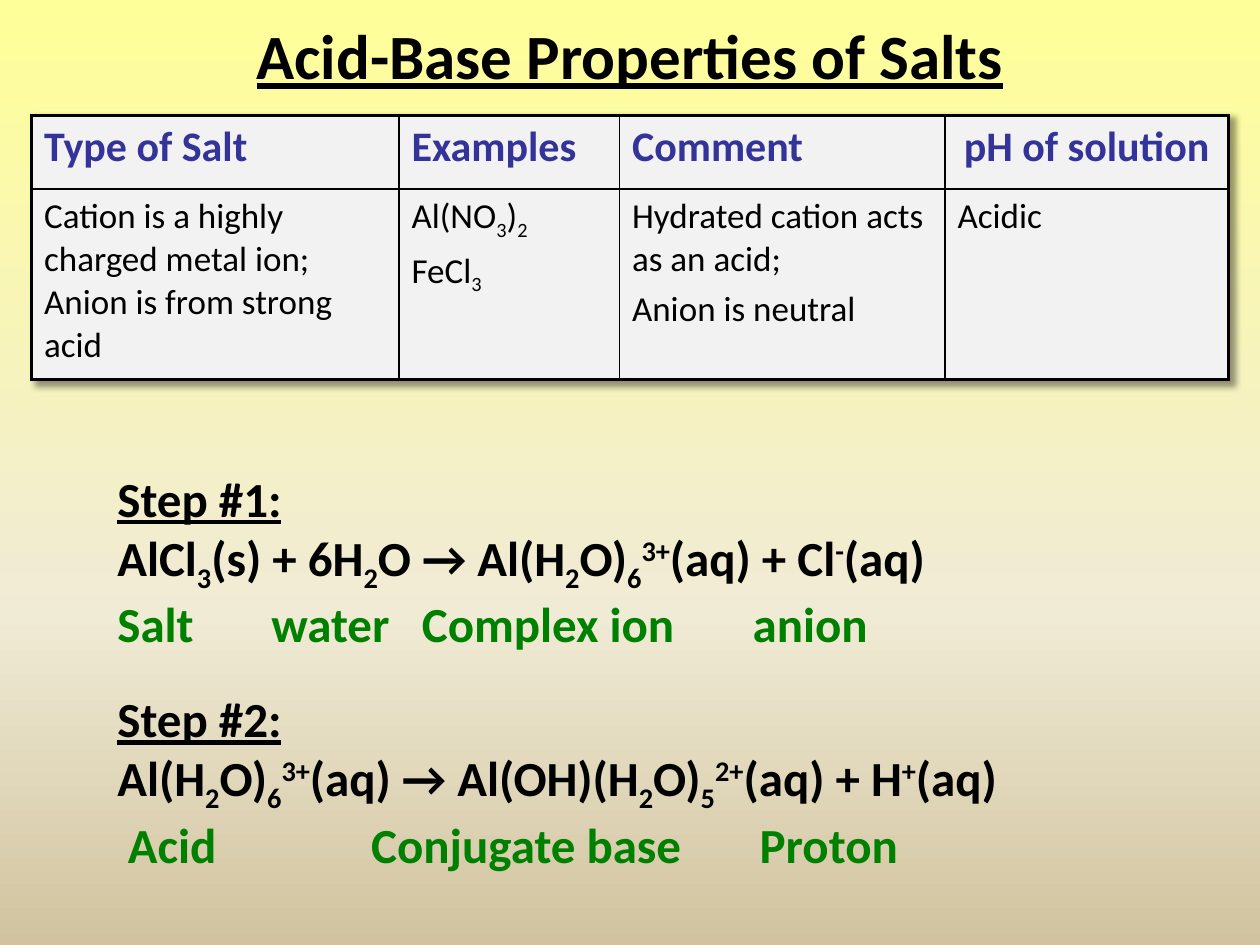
from lxml import etree
from pptx import Presentation
from pptx import util as u
from pptx.dml.color import RGBColor
from pptx.enum import text
from pptx.oxml import ns

BLACK = RGBColor(0x00, 0x00, 0x00)
BLUE = RGBColor(0x33, 0x33, 0x99)
GREEN = RGBColor(0x00, 0x80, 0x00)
PALE = RGBColor(0xF2, 0xF2, 0xF2)
YELLOW = RGBColor(0xFF, 0xFF, 0x99)
CREAM = RGBColor(0xF0, 0xEB, 0xD5)
SAND = RGBColor(0xD1, 0xC3, 0x9F)


def add_node(parent, tag, **attributes):
    node = etree.SubElement(parent, ns.qn(tag))
    for name, value in attributes.items():
        node.set(name, str(value))
    return node


def sub(content):
    return content, -25000


def sup(content):
    return content, 30000


class SlideBuilder:
    """Hold the style and the current slide, and add each kind of element."""

    font = "Calibri"
    thin, thick = u.Pt(1), u.Pt(2.25)

    def __init__(self, page):
        self.page = page

    def background(self, stops):
        fill = self.page.background.fill
        fill.gradient()
        fill.gradient_angle = 270
        stop_list = self.page.element.find(".//" + ns.qn("a:gsLst"))
        for stop in list(stop_list):
            stop_list.remove(stop)
        for percent, color in stops:
            stop = add_node(stop_list, "a:gs", pos=percent * 1000)
            add_node(stop, "a:srgbClr", val=color)

    def add_spans(self, para, spans, size, color=BLACK, bold=True, underline=False):
        for item in spans:
            content, baseline = (item, 0) if isinstance(item, str) else item
            span = para.add_run()
            span.text = content
            font = span.font
            font.name, font.size, font.bold = self.font, u.Pt(size), bold
            font.underline = underline
            font.color.rgb = color
            if baseline:
                span._r.get_or_add_rPr().set("baseline", str(baseline))

    def text_box(self, left, top, width, height):
        box = self.page.shapes.add_textbox(*map(u.Pt, (left, top, width, height)))
        box.text_frame.word_wrap = True
        return box.text_frame

    def title(self, content):
        frame = self.text_box(36, 0, 648, 62.6)
        frame.vertical_anchor = text.MSO_ANCHOR.MIDDLE
        para = frame.paragraphs[0]
        para.alignment = text.PP_ALIGN.CENTER
        self.add_spans(para, [content], 36, underline=True)

    def step(self, top, width, heading, equation, labels, tabs):
        frame = self.text_box(60, top, width, 108.7)
        self.add_spans(frame.paragraphs[0], [heading], 28, underline=True)
        self.add_spans(frame.add_paragraph(), equation, 28)
        para = frame.add_paragraph()
        tab_list = add_node(para._p.get_or_add_pPr(), "a:tabLst")
        for position in tabs:
            add_node(tab_list, "a:tab", pos=u.Pt(position), algn="l")
        self.add_spans(para, [labels], 28, GREEN)

    def borders(self, cell, edges):
        properties = cell._tc.get_or_add_tcPr()
        for side, outer in edges.items():
            line = add_node(properties, "a:ln" + side, w=self.thick if outer else self.thin)
            add_node(add_node(line, "a:solidFill"), "a:srgbClr", val=BLACK)

    def shadow(self, table):
        effects = etree.Element(ns.qn("a:effectLst"))
        shade = add_node(effects, "a:outerShdw", blurRad=u.Pt(4), dist=u.Pt(3),
                         dir=2700000, algn="tl", rotWithShape=0)
        add_node(add_node(shade, "a:srgbClr", val=BLACK), "a:alpha", val=40000)
        table._tbl.tblPr.insert(0, effects)

    def table(self, left, top, widths, heights, rows):
        last_row, last_column = len(heights) - 1, len(widths) - 1
        table = self.page.shapes.add_table(
            len(heights), len(widths),
            *map(u.Pt, (left, top, sum(widths), sum(heights)))).table
        table.first_row = table.horz_banding = False
        for column, width in zip(table.columns, widths):
            column.width = u.Pt(width)
        for row, height in zip(table.rows, heights):
            row.height = u.Pt(height)
        for r, row in enumerate(rows):
            header = r == 0
            size, color = (24, BLUE) if header else (20, BLACK)
            for c, lines in enumerate(row):
                cell = table.cell(r, c)
                self.borders(cell, {"L": c == 0, "R": c == last_column,
                                    "T": r == 0, "B": r == last_row})
                cell.fill.solid()
                cell.fill.fore_color.rgb = PALE
                for i, spans in enumerate(lines):
                    frame = cell.text_frame
                    para = frame.add_paragraph() if i else frame.paragraphs[0]
                    para.space_before = u.Pt(size * 0.2)
                    if header and c == last_column:
                        para.alignment = text.PP_ALIGN.CENTER
                    self.add_spans(para, spans, size, color, bold=header)
        self.shadow(table)


def main():
    deck = Presentation()
    deck.slide_width, deck.slide_height = u.Pt(720), u.Pt(540)
    builder = SlideBuilder(deck.slides.add_slide(deck.slide_layouts[6]))
    builder.background([(0, YELLOW), (65, CREAM), (100, SAND)])
    builder.title("Acid-Base Properties of Salts")
    builder.table(18, 66, [210, 126, 186, 162], [42, 109], [
        [[["Type of Salt"]], [["Examples"]], [["Comment"]], [["pH of solution"]]],
        [[["Cation is a highly charged metal ion; Anion is from strong acid"]],
         [["Al(NO", sub("3"), ")", sub("2")], ["FeCl", sub("3")]],
         [["Hydrated cation acts as an acid;"], ["Anion is neutral"]],
         [["Acidic"]]],
    ])
    builder.step(264, 530, "Step #1:", [
        "AlCl", sub("3"), "(s) + 6H", sub("2"), "O → Al(H", sub("2"), "O)", sub("6"),
        sup("3+"), "(aq) + Cl", sup("-"), "(aq)",
    ], "Salt\twater\tComplex ion\tanion", [88, 174, 363])
    builder.step(390, 572, "Step #2:", [
        "Al(H", sub("2"), "O)", sub("6"), sup("3+"), "(aq) → Al(OH)(H", sub("2"), "O)",
        sub("5"), sup("2+"), "(aq) + H", sup("+"), "(aq)",
    ], "\tAcid\tConjugate base\tProton", [6, 145, 367])
    deck.save("out.pptx")


if __name__ == "__main__":
    main()
